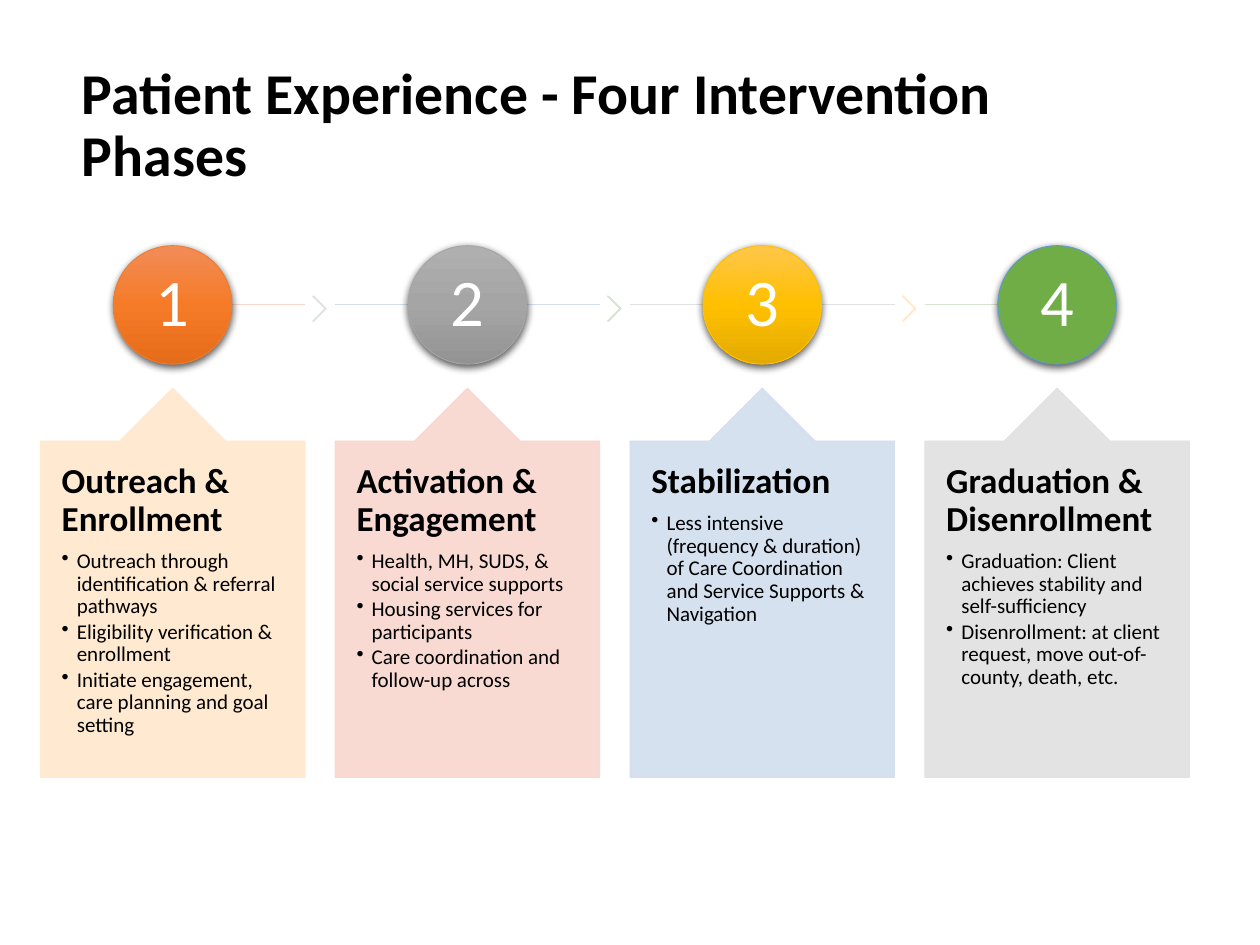
from pptx import Presentation
from pptx.dml.color import RGBColor
from pptx.enum.shapes import MSO_CONNECTOR as Link, MSO_SHAPE as Shape
from pptx.enum.text import MSO_ANCHOR as Anchor, MSO_AUTO_SIZE as Fit, PP_ALIGN as Align
from pptx.oxml import parse_xml
from pptx.oxml.ns import nsdecls, qn
from pptx.util import Inches, Pt

COLORS = {
    "text": "000000", "number": "FFFFFF", "peach": "FFE8CC", "rose": "F8D7CE",
    "blue": "D2DEEF", "gray": "E1E1E1", "sage": "D5E3CF", "orange": "ED7D31",
    "silver": "A5A5A5", "gold": "FFC000", "green": "70AD47", "outline": "5B9BD5",
}
GRADIENTS = {
    "orange": ("F18C57", "F67B28", "E56C19"),
    "silver": ("AFAFAF", "A5A5A5", "939393"),
    "gold": ("FFC64B", "FFC000", "E3AB00"),
}
TITLE = {"size": Pt(33), "bold": True}
NUMBER = {"size": Pt(38), "bold": False}
HEADING = {"size": Pt(20), "bold": True}
BULLET = {"size": Pt(12), "bold": False}

# callout, rail, chevron and circle colours, then heading and bullets
PHASES = [
    ("peach", "rose", "gray", "orange", "Outreach & Enrollment", [
        "Outreach through identification & referral pathways",
        "Eligibility verification & enrollment",
        "Initiate engagement, care planning and goal setting"]),
    ("rose", "blue", "sage", "silver", "Activation & Engagement", [
        "Health, MH, SUDS, & social service supports",
        "Housing services for participants",
        "Care coordination and follow-up across"]),
    ("blue", "gray", "peach", "gold", "Stabilization", [
        "Less intensive (frequency & duration) of Care Coordination "
        "and Service Supports & Navigation"]),
    ("gray", "sage", None, "green", "Graduation & Disenrollment", [
        "Graduation: Client achieves stability and self-sufficiency",
        "Disenrollment: at client request, move out-of-county, death, etc."]),
]

# Grid in inches
LEFT, PITCH, WIDTH = 0.32, 2.34, 2.1
RAIL_Y, CIRCLE, NUMBER_BOX = 2.42, 0.94, 0.67
CHEVRON_WIDTH, CHEVRON_HEIGHT = 0.11, 0.2
CALLOUT_TOP, CALLOUT_HEIGHT, POINTER = 3.08, 3.09, 0.42


def write(para, text, color, style):
    span = para.add_run()
    span.text = text
    span.font.name = "Calibri"
    span.font.color.rgb = RGBColor.from_string(COLORS[color])
    for name, value in style.items():
        setattr(span.font, name, value)
    para.line_spacing = 0.9


def add_pale_shape(kind, left, top, width, height, color, adjustments):
    """Add a flat shape in one colour at 90 % opacity, fill and line alike."""
    shape = slide.shapes.add_shape(
        kind, Inches(left), Inches(top), Inches(width), Inches(height))
    shape.shadow.inherit = False
    for index, value in enumerate(adjustments):
        shape.adjustments[index] = value
    shape.line.width = Pt(0.5)
    for fill in (shape.fill, shape.line.fill):
        fill.solid()
        fill.fore_color.rgb = RGBColor.from_string(COLORS[color])
    for tone in shape._element.spPr.iter(qn("a:srgbClr")):
        tone.append(parse_xml(f'<a:alpha {nsdecls("a")} val="90000"/>'))


deck = Presentation()
deck.slide_width, deck.slide_height = Inches(10), Inches(7.5)
slide = deck.slides.add_slide(deck.slide_layouts[5])

title = slide.shapes.title
title.left, title.top, title.width, title.height = map(Inches, (0.55, 0.28, 8.62, 1.45))
title.text_frame.auto_size = Fit.NONE
title.text_frame.vertical_anchor = Anchor.MIDDLE
title.text_frame.paragraphs[0].alignment = Align.LEFT
write(title.text_frame.paragraphs[0], "Patient Experience - Four Intervention Phases",
      "text", TITLE)

for column, (callout, rail, chevron, circle, heading, bullets) in enumerate(PHASES):
    left = LEFT + column * PITCH
    right, center = left + WIDTH, left + WIDTH / 2

    # Rail through the circle, open at both ends of the row
    start = center if column == 0 else left
    end = center if column == len(PHASES) - 1 else right
    line = slide.shapes.add_connector(
        Link.STRAIGHT, Inches(start), Inches(RAIL_Y), Inches(end), Inches(RAIL_Y))
    line.line.color.rgb = RGBColor.from_string(COLORS[rail])
    line.line.width = Pt(0.5)
    line._element.spPr.append(parse_xml(f'<a:effectLst {nsdecls("a")}/>'))
    if chevron:
        add_pale_shape(Shape.CHEVRON, right + 0.06, RAIL_Y - 0.07, CHEVRON_WIDTH,
                       CHEVRON_HEIGHT, chevron, [0.9])

    # Numbered circle
    disc = slide.shapes.add_shape(
        Shape.OVAL, Inches(center - CIRCLE / 2), Inches(RAIL_Y - CIRCLE / 2),
        Inches(CIRCLE), Inches(CIRCLE))
    if circle in GRADIENTS:
        stops = "".join(
            f'<a:gs pos="{place * 50000}"><a:srgbClr val="{tone}"/></a:gs>'
            for place, tone in enumerate(GRADIENTS[circle]))
        disc._element.spPr.append(parse_xml(
            f'<a:gradFill {nsdecls("a")} rotWithShape="1"><a:gsLst>{stops}</a:gsLst>'
            '<a:lin ang="5400000" scaled="0"/></a:gradFill>'))
    else:
        disc.fill.solid()
        disc.fill.fore_color.rgb = RGBColor.from_string(COLORS[circle])
    edge = circle if circle in GRADIENTS else "outline"
    disc.line.color.rgb = RGBColor.from_string(COLORS[edge])
    disc.line.width = Pt(0.5)
    disc.shadow.inherit = False
    disc._element.spPr.find(qn("a:effectLst")).append(parse_xml(
        f'<a:outerShdw {nsdecls("a")} blurRad="{Pt(4.5)}" dist="{Pt(1.5)}" '
        'dir="5400000" algn="ctr" rotWithShape="0"><a:srgbClr val="000000">'
        '<a:alpha val="63000"/></a:srgbClr></a:outerShdw>'))

    box = slide.shapes.add_textbox(
        Inches(center - NUMBER_BOX / 2), Inches(RAIL_Y - NUMBER_BOX / 2),
        Inches(NUMBER_BOX), Inches(NUMBER_BOX))
    frame = box.text_frame
    frame.word_wrap, frame.vertical_anchor = True, Anchor.MIDDLE
    for side in ("left", "top", "right", "bottom"):
        setattr(frame, f"margin_{side}", Inches(0.04))
    frame.paragraphs[0].alignment = Align.CENTER
    write(frame.paragraphs[0], str(column + 1), "number", NUMBER)

    # Callout with heading and bullets
    add_pale_shape(Shape.UP_ARROW_CALLOUT, left, CALLOUT_TOP, WIDTH, CALLOUT_HEIGHT,
                   callout, [0.5, 0.2, 0.2, 1])
    box = slide.shapes.add_textbox(
        Inches(left), Inches(CALLOUT_TOP + POINTER), Inches(WIDTH),
        Inches(CALLOUT_HEIGHT - POINTER))
    frame = box.text_frame
    frame.word_wrap = True
    frame.margin_left = frame.margin_right = Inches(0.17)
    frame.margin_top = frame.margin_bottom = Inches(0.18)
    write(frame.paragraphs[0], heading, "text", HEADING)
    frame.paragraphs[0].space_after = Pt(6.3)
    for bullet in bullets:
        para = frame.add_paragraph()
        para.level = 1
        write(para, bullet, "text", BULLET)
        para.space_after = Pt(1.6)
        properties = para._p.get_or_add_pPr()
        properties.set("marL", str(Inches(0.12)))
        properties.set("indent", str(-Inches(0.12)))
        properties.append(parse_xml(f'<a:buChar {nsdecls("a")} char="•"/>'))

deck.save("out.pptx")
